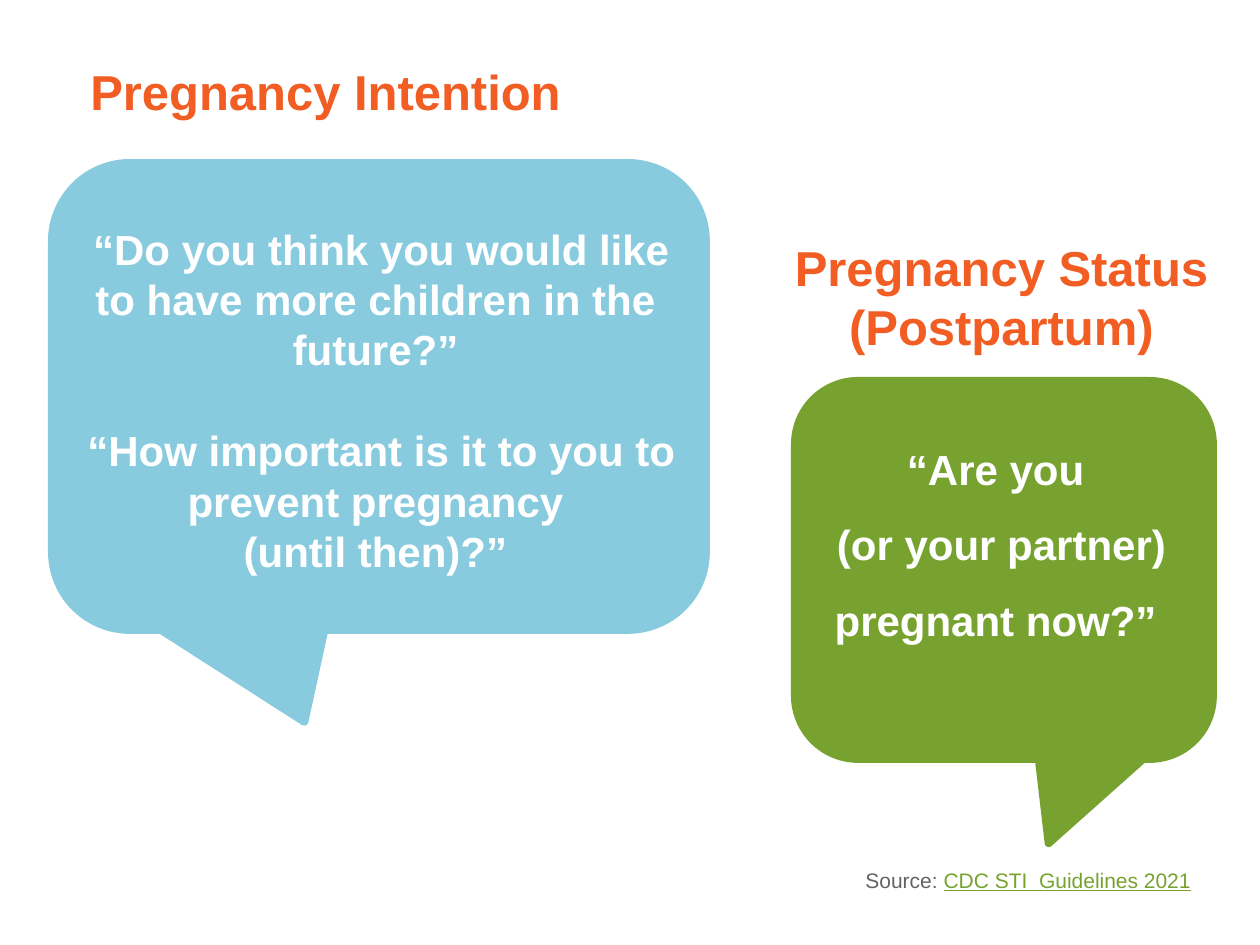
import pptx
import pptx.util
import pptx.dml.color
import pptx.enum.shapes
import pptx.enum.text

PX = 914400 // 126
ORANGE, BLUE, GREEN, WHITE, GRAY = "F15D22", "88CBDF", "78A22F", "FFFFFF", "616365"

STATUS = ["Pregnancy Status\v(Postpartum)"]
INTENT = ["Pregnancy Intention"]
FUTURE = [
    " “Do you think you would like to have more children in the future?”",
    " “How important is it to you to prevent pregnancy",
    "(until then)?”",
]
NOW = ["“Are you ", "(or your partner) pregnant now?” "]
SOURCE = [("Source: ", GRAY, False), ("CDC STI  Guidelines 2021", GREEN, True)]

BUBBLES = [
    ((52, 163, 654, 467), BLUE, (-0.114, 0.697, 0.167)),
    ((795, 381, 418, 378), GREEN, (0.107, 0.723, 0.167)),
]

HEAD = dict(size=28, color=ORANGE, lead=33.6)
QUOTE = dict(size=24, color=WHITE, indent=30)


def scale(box):
    return [n * PX for n in box]


def rgb(code):
    return pptx.dml.color.RGBColor.from_string(code)


def style(font, size, color, bold=False, line=False):
    font.name = "Arial"
    font.size = pptx.util.Pt(size)
    font.bold = bold
    font.underline = line
    font.color.rgb = rgb(color)


def write(shape, lines, size, color, lead, indent=0, middle=False, gaps=()):
    frame = shape.text_frame
    frame.word_wrap = True
    frame.auto_size = pptx.enum.text.MSO_AUTO_SIZE.NONE
    anchor = pptx.enum.text.MSO_ANCHOR
    frame.vertical_anchor = anchor.MIDDLE if middle else anchor.TOP
    for i, text in enumerate(lines):
        para = frame.add_paragraph() if i else frame.paragraphs[0]
        para.text = text
        para.alignment = pptx.enum.text.PP_ALIGN.CENTER
        para.line_spacing = pptx.util.Pt(lead)
        para.space_before = pptx.util.Pt(lead if i in gaps else 0)
        if indent:
            props = para._p.get_or_add_pPr()
            props.set("marL", str(indent * PX))
            props.set("indent", "0")
        for run in para.runs:
            style(run.font, size, color, bold=True)


def bubble(slide, box, color, tail):
    kind = pptx.enum.shapes.MSO_SHAPE.ROUNDED_RECTANGULAR_CALLOUT
    shape = slide.shapes.add_shape(kind, *scale(box))
    shape.shadow.inherit = False
    shape.fill.solid()
    shape.fill.fore_color.rgb = rgb(color)
    shape.line.color.rgb = rgb(color)
    shape.line.width = pptx.util.Pt(4.5)
    for i, value in enumerate(tail):
        shape.adjustments[i] = value


def main():
    deck = pptx.Presentation()
    deck.slide_width, deck.slide_height = scale((1260, 945))
    slide = deck.slides.add_slide(deck.slide_layouts[5])

    def textbox(*box):
        return slide.shapes.add_textbox(*scale(box))

    title = slide.shapes.title
    title.left, title.top, title.width, title.height = scale((761, 231, 481, 198))
    write(title, STATUS, **HEAD)

    for box, color, tail in BUBBLES:
        bubble(slide, box, color, tail)

    write(textbox(28, 215, 665, 369), FUTURE, lead=28.8, middle=True, gaps=(1,), **QUOTE)
    write(textbox(52, 55, 547, 140), INTENT, **HEAD)
    write(textbox(761, 412, 451, 242), NOW, lead=43.2, **QUOTE)

    source = textbox(853, 861, 360, 38).text_frame
    source.word_wrap = False
    for text, color, line in SOURCE:
        run = source.paragraphs[0].add_run()
        run.text = text
        style(run.font, 12, color, line=line)

    deck.save("out.pptx")


if __name__ == "__main__":
    main()
